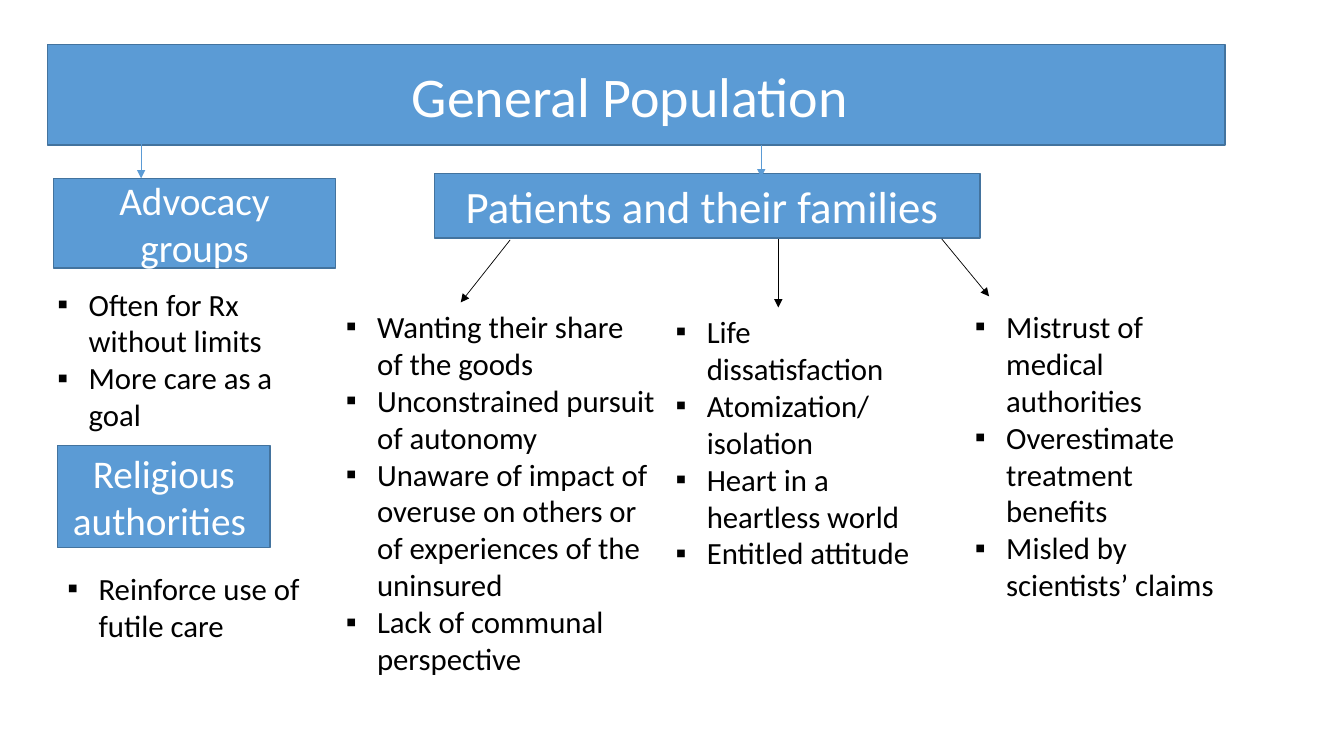
from lxml.etree import SubElement
from pptx import Presentation
from pptx.dml.color import RGBColor
from pptx.enum.shapes import MSO_CONNECTOR, MSO_SHAPE
from pptx.enum.text import MSO_ANCHOR, MSO_AUTO_SIZE, PP_ALIGN
from pptx.oxml.ns import qn
from pptx.util import Pt

EMU_PER_PX = 9144  # 100 px to the inch
FONT = "Calibri"
BLUE, EDGE, WHITE, BLACK = "5B9BD5", "43739E", "FFFFFF", "000000"
BULLET_INDENT = 31

BANNER = ("General Population ", 40, (47, 44, 1168, 100))
GROUPS = [
    ("Patients and their families ", 32, (431, 172, 541, 64)),
    ("Advocacy groups", 28, (53, 177, 280, 89)),
    ("Religious authorities ", 28, (57, 442, 211, 101)),
]
LISTS = [
    ((47, 278, 286, 158), ["Often for Rx without limits", "More care as a goal"]),
    ((333, 300, 327, 444), [
        "Wanting their share of the goods",
        "Unconstrained pursuit of autonomy",
        "Unaware of impact of overuse on others or of experiences of the uninsured",
        "Lack of communal perspective"]),
    ((660, 305, 276, 293), [
        "Life dissatisfaction", "Atomization/ isolation",
        "Heart in a heartless world", "Entitled attitude"]),
    ((957, 300, 282, 306), [
        "Mistrust of medical authorities",
        "Overestimate treatment benefits",
        "Misled by scientists’ claims"]),
]
RELIGIOUS_LIST = ((57, 560, 253, 84), ["Reinforce use of futile care"])
ARROWS = [
    ((140, 113), (140, 177), BLUE),
    ((755, 144), (755, 176), BLUE),
    ((506, 238), (457, 300), BLACK),
    ((772, 237), (772, 305), BLACK),
    ((934, 237), (981, 294), BLACK),
]


def px(length):
    return length * EMU_PER_PX


def rgb(color):
    return RGBColor.from_string(color)


def place(box, area):
    box.left, box.top, box.width, box.height = map(px, area)


def write(box, lines, size, color, align, anchor):
    frame = box.text_frame
    frame.text = "\n".join(lines)
    frame.word_wrap = True
    frame.auto_size = MSO_AUTO_SIZE.NONE
    frame.vertical_anchor = anchor
    for para in frame.paragraphs:
        para.alignment = align
        para.line_spacing = 1.0
        para.space_before = para.space_after = Pt(0)
        for span in para.runs:
            span.font.name = FONT
            span.font.size = Pt(size)
            span.font.bold = False
            span.font.color.rgb = rgb(color)


def style_group(box, text, size):
    box.fill.solid()
    box.fill.fore_color.rgb = rgb(BLUE)
    box.line.color.rgb = rgb(EDGE)
    box.line.width = Pt(1)
    write(box, [text], size, WHITE, PP_ALIGN.CENTER, MSO_ANCHOR.MIDDLE)


def add_group(page, text, size, area):
    box = page.shapes.add_shape(MSO_SHAPE.RECTANGLE, *map(px, area))
    box.shadow.inherit = False
    style_group(box, text, size)


def fill_list(box, items):
    write(box, items, 22, BLACK, PP_ALIGN.LEFT, MSO_ANCHOR.TOP)
    for para in box.text_frame.paragraphs:
        properties = para._p.get_or_add_pPr()
        properties.set("marL", str(px(BULLET_INDENT)))
        properties.set("indent", str(-px(BULLET_INDENT)))
        SubElement(properties, qn("a:buFont"), typeface="Arial")
        SubElement(properties, qn("a:buChar"), char="▪")


def add_arrow(page, start, end, color):
    arrow = page.shapes.add_connector(
        MSO_CONNECTOR.STRAIGHT, *map(px, start + end))
    arrow.line.color.rgb = rgb(color)
    arrow.line.width = Pt(0.5)
    SubElement(arrow.line._get_or_add_ln(), qn("a:tailEnd"), type="triangle")
    SubElement(arrow._element.spPr, qn("a:effectLst"))


def main():
    deck = Presentation()
    deck.slide_width, deck.slide_height = px(1333), px(750)
    # The comparison layout offers a title and four body placeholders
    page = deck.slides.add_slide(deck.slide_layouts[4])
    title, *bodies = page.placeholders

    # Banner
    text, size, area = BANNER
    place(title, area)
    style_group(title, text, size)

    # Group boxes
    for text, size, area in GROUPS:
        add_group(page, text, size, area)

    # Bulleted lists
    for body, (area, items) in zip(bodies, LISTS):
        place(body, area)
        fill_list(body, items)
    area, items = RELIGIOUS_LIST
    fill_list(page.shapes.add_textbox(*map(px, area)), items)

    # Arrows
    for start, end, color in ARROWS:
        add_arrow(page, start, end, color)

    deck.save("out.pptx")


if __name__ == "__main__":
    main()
